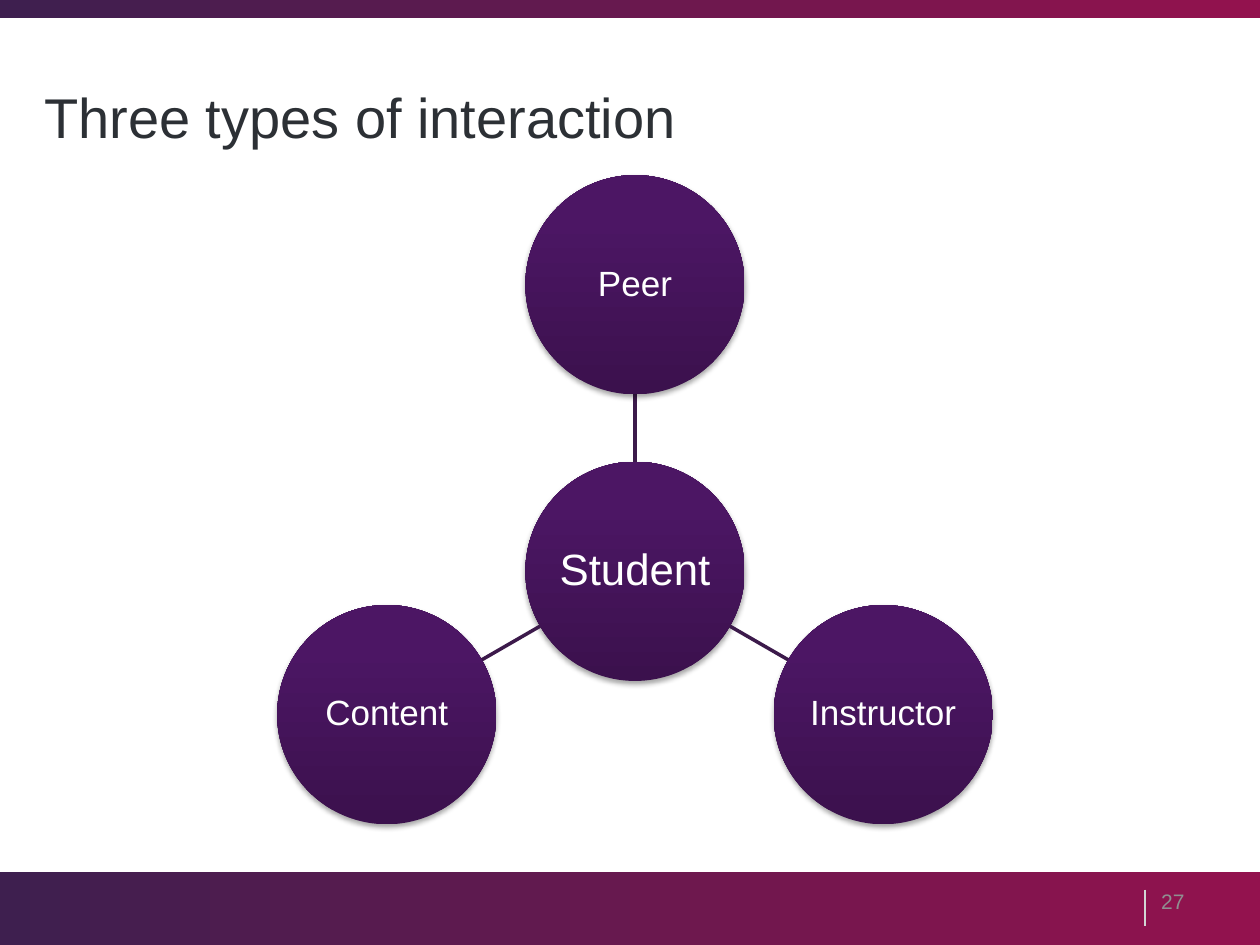
from copy import deepcopy
from math import cos, radians, sin

from lxml.etree import SubElement
from pptx import Presentation
from pptx.dml.color import RGBColor
from pptx.enum.shapes import MSO_CONNECTOR, MSO_SHAPE
from pptx.enum.text import MSO_ANCHOR, PP_ALIGN
from pptx.oxml.ns import qn
from pptx.util import Inches, Pt

PLUM = RGBColor(0x3E, 0x1F, 0x4F)
CRIMSON = RGBColor(0x93, 0x12, 0x4E)
DARK_PURPLE = RGBColor(0x3B, 0x11, 0x4D)
PURPLE = RGBColor(0x4C, 0x16, 0x64)
LIGHT_PURPLE = RGBColor(0x4D, 0x15, 0x66)
SPOKE = RGBColor(0x3C, 0x1A, 0x4B)
DIVIDER = RGBColor(0xD2, 0xD6, 0xD4)
INK = RGBColor(0x2C, 0x30, 0x35)
GREY = RGBColor(0x8F, 0x8F, 0x90)
WHITE = RGBColor(0xFF, 0xFF, 0xFF)

BAND_STOPS = [(0, PLUM), (1, CRIMSON)]
CIRCLE_STOPS = [(0, DARK_PURPLE), (0.8, PURPLE), (1, LIGHT_PURPLE)]


def write(frame, text, size, color, align):
    frame.vertical_anchor = MSO_ANCHOR.MIDDLE
    paragraph = frame.paragraphs[0]
    paragraph.alignment = align
    run = paragraph.add_run()
    run.text = text
    run.font.name = "Arial"
    run.font.size = Pt(size)
    run.font.color.rgb = color
    return paragraph


def add_gradient_shape(slide, kind, left, top, width, height, stops, angle):
    shape = slide.shapes.add_shape(
        kind, Inches(left), Inches(top), Inches(width), Inches(height))
    shape.fill.gradient()
    shape.fill.gradient_angle = angle
    stop_list = shape.fill.gradient_stops
    gradient = next(shape._element.spPr.iter(qn("a:gsLst")))
    for _ in range(len(stops) - len(stop_list)):
        gradient.append(deepcopy(gradient[-1]))
    for stop, (position, color) in zip(shape.fill.gradient_stops, stops):
        stop.position = position
        stop.color.rgb = color
    shape.line.fill.background()
    shape.shadow.inherit = False
    return shape


def add_line(slide, start, end, color, width):
    line = slide.shapes.add_connector(
        MSO_CONNECTOR.STRAIGHT, *(Inches(value) for value in (*start, *end)))
    line.line.color.rgb = color
    line.line.width = Pt(width)
    SubElement(line._element.spPr, qn("a:effectLst"))


def add_title(slide, left, top, width, height):
    title = slide.shapes.title
    title.left, title.top = Inches(left), Inches(top)
    title.width, title.height = Inches(width), Inches(height)
    write(title.text_frame, "Three types of interaction", 32, INK, PP_ALIGN.LEFT)


def add_band(slide, left, top, width, height):
    add_gradient_shape(
        slide, MSO_SHAPE.RECTANGLE, left, top, width, height, BAND_STOPS, 0)


def add_footer(slide, left, top, width, height):
    add_band(slide, left, top, width, height)
    divider_x = left + width - 0.91
    add_line(slide, (divider_x, top + 0.14), (divider_x, top + 0.43), DIVIDER, 1)
    number = slide.shapes.add_textbox(
        Inches(left + width - 2.83), Inches(top + 0.03), Inches(2.33), Inches(0.4))
    number.text_frame.word_wrap = True
    write(number.text_frame, "27", 12, GREY, PP_ALIGN.RIGHT)


def add_circle(slide, center_x, center_y, diameter, label, size):
    circle = add_gradient_shape(
        slide, MSO_SHAPE.OVAL, center_x - diameter / 2, center_y - diameter / 2,
        diameter, diameter, CIRCLE_STOPS, 90)
    effects = circle._element.spPr.find(qn("a:effectLst"))
    shadow = SubElement(
        effects, qn("a:outerShdw"), blurRad=str(Pt(3.1)), dist=str(Pt(1.8)),
        dir="5400000", rotWithShape="0")
    black = SubElement(shadow, qn("a:srgbClr"), val="000000")
    SubElement(black, qn("a:alpha"), val="35000")
    frame = circle.text_frame
    frame.margin_left = frame.margin_right = Inches(0.01)
    frame.margin_top = frame.margin_bottom = Inches(0.01)
    frame.word_wrap = False
    write(frame, label, size, WHITE, PP_ALIGN.CENTER).line_spacing = 0.9


def add_interaction_wheel(slide, left, top, width, diameter):
    orbit = (width - diameter) / (2 * cos(radians(30)))
    center_x = left + width / 2
    center_y = top + diameter / 2 + orbit
    add_circle(slide, center_x, center_y, diameter, "Student", 25)
    for label, angle in [("Peer", -90), ("Instructor", 30), ("Content", 150)]:
        across, down = cos(radians(angle)), sin(radians(angle))
        start, end = (
            (center_x + reach * across, center_y + reach * down)
            for reach in (diameter / 2, orbit - diameter / 2))
        add_line(slide, start, end, SPOKE, 2)
        add_circle(slide, center_x + orbit * across, center_y + orbit * down,
                   diameter, label, 20)


def main():
    presentation = Presentation()
    presentation.slide_width = Inches(10)
    presentation.slide_height = Inches(7.5)
    slide = presentation.slides.add_slide(presentation.slide_layouts[5])
    add_band(slide, 0, 0, 10, 0.14)
    add_footer(slide, 0, 6.92, 10, 0.58)
    add_title(slide, 0.25, 0.3, 9.5, 1.25)
    add_interaction_wheel(slide, 2.2, 1.39, 5.68, 1.74)
    presentation.save("out.pptx")


if __name__ == "__main__":
    main()
